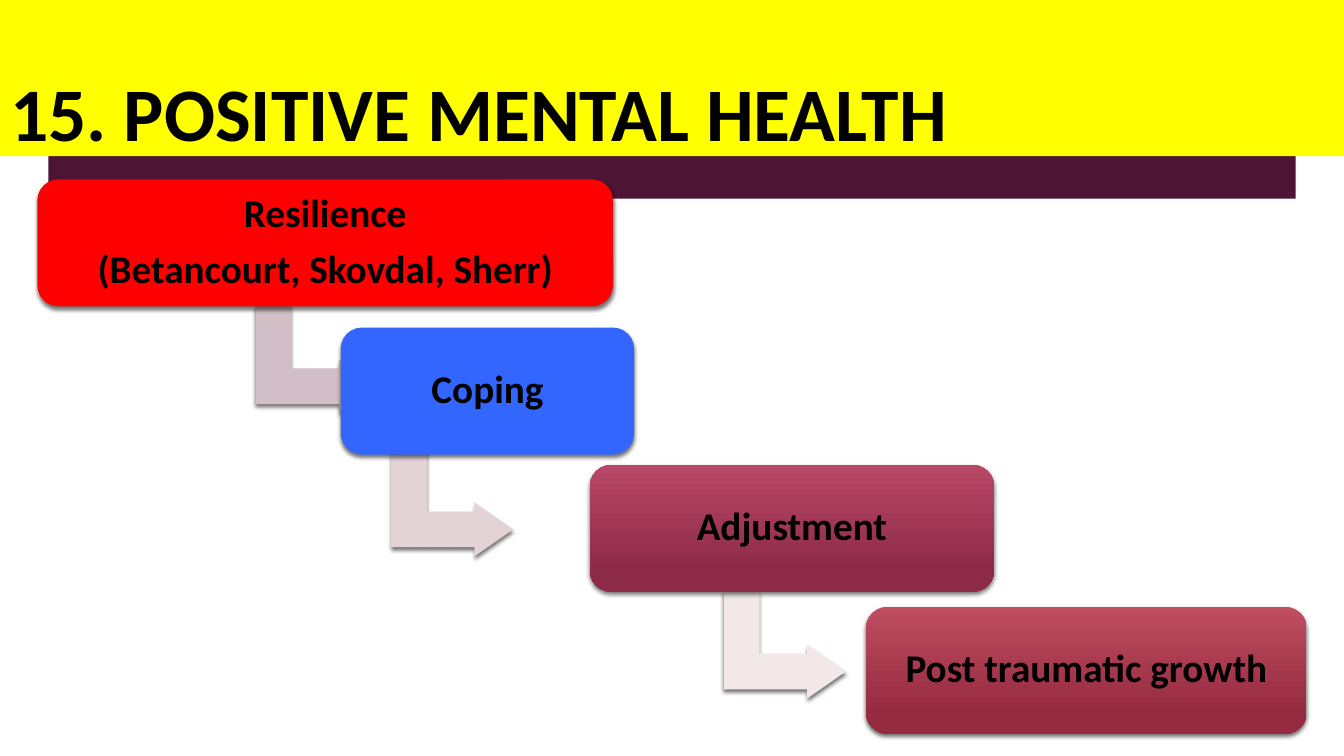
from dataclasses import dataclass

import pptx
import pptx.dml.color
import pptx.dml.fill
import pptx.enum.shapes
import pptx.enum.text
import pptx.oxml
import pptx.oxml.ns
import pptx.shapes.autoshape
import pptx.slide
import pptx.util

Inches = pptx.util.Inches
Pt = pptx.util.Pt
Shape = pptx.shapes.autoshape.Shape
Kind = pptx.enum.shapes.MSO_SHAPE
Align = pptx.enum.text.PP_ALIGN
Anchor = pptx.enum.text.MSO_ANCHOR


@dataclass(frozen=True)
class Arrow:
    left: float
    top: float
    color: str


@dataclass(frozen=True)
class Step:
    lines: tuple[str, ...]
    left: float
    top: float
    width: float
    colors: tuple[str, ...]
    arrow: Arrow | None = None


STEPS = (
    Step(("Resilience", "(Betancourt, Skovdal, Sherr)"), 0.37, 1.78, 5.71,
         ("FF0000",), Arrow(2.61, 2.96, "D1BEC6")),
    Step(("Coping",), 3.38, 3.25, 2.91, ("3366FF",), Arrow(3.95, 4.38, "E3D2D6")),
    Step(("Adjustment",), 5.85, 4.61, 4.01, ("B94867", "8C2A48"),
         Arrow(7.25, 5.79, "F2E8E9")),
    Step(("Post traumatic growth",), 8.59, 6.02, 4.37, ("BF4E61", "962A3F")),
)
SHADE = (
    f'<a:effectLst {pptx.oxml.ns.nsdecls("a")}>'
    '<a:outerShdw blurRad="38100" dist="25400" dir="5400000" rotWithShape="0">'
    '<a:srgbClr val="000000"><a:alpha val="55000"/></a:srgbClr>'
    '</a:outerShdw></a:effectLst>'
)


def rgb(code: str) -> pptx.dml.color.RGBColor:
    return pptx.dml.color.RGBColor.from_string(code)


def paint(fill: pptx.dml.fill.FillFormat, colors: tuple[str, ...]) -> None:
    if len(colors) == 1:
        fill.solid()
        fill.fore_color.rgb = rgb(colors[0])
        return
    fill.gradient()
    fill.gradient_angle = 270
    for stop, code, place in zip(fill.gradient_stops, colors, (0, 0.84)):
        stop.color.rgb = rgb(code)
        stop.position = place


def add_form(slide: pptx.slide.Slide, kind: Kind, left: float, top: float,
             width: float, height: float, colors: tuple[str, ...]) -> Shape:
    form = slide.shapes.add_shape(
        kind, Inches(left), Inches(top), Inches(width), Inches(height))
    form.shadow.inherit = False
    form.line.fill.background()
    paint(form.fill, colors)
    return form


def cast(form: Shape) -> None:
    props = form._element.spPr
    props.remove(props.find(pptx.oxml.ns.qn("a:effectLst")))
    props.append(pptx.oxml.parse_xml(SHADE))


def add_arrow(slide: pptx.slide.Slide, arrow: Arrow) -> None:
    form = add_form(slide, Kind.BENT_UP_ARROW, arrow.left, arrow.top,
                    1.07, 1.21, (arrow.color,))
    form.rotation = 90
    for index, value in enumerate((0.33, 0.25, 0.36)):
        form.adjustments[index] = value
    cast(form)


def add_step(slide: pptx.slide.Slide, step: Step) -> None:
    if step.arrow:
        add_arrow(slide, step.arrow)
    form = add_form(slide, Kind.ROUNDED_RECTANGLE, step.left, step.top,
                    step.width, 1.26, step.colors)
    cast(form)
    frame = form.text_frame
    frame.word_wrap = True
    frame.vertical_anchor = Anchor.MIDDLE
    frame.margin_left = frame.margin_right = Inches(0.18)
    frame.margin_top = frame.margin_bottom = Inches(0.12)
    frame.text = "\n".join(step.lines)
    for para in frame.paragraphs:
        para.alignment = Align.CENTER
        para.line_spacing = 0.9
        para.space_after = Pt(10)
        style(para, 28)


def style(para: pptx.text.text._Paragraph, size: int) -> None:
    para.font.name = "Calibri"
    para.font.size = Pt(size)
    para.font.bold = True
    para.font.color.rgb = rgb("000000")


def set_title(slide: pptx.slide.Slide) -> None:
    title = slide.shapes.title
    title.left = title.top = Inches(0)
    title.width, title.height = Inches(13.33), Inches(1.55)
    paint(title.fill, ("FFFF00",))
    frame = title.text_frame
    frame.text = "15. POSITIVE MENTAL HEALTH"
    frame.auto_size = pptx.enum.text.MSO_AUTO_SIZE.NONE
    frame.vertical_anchor = Anchor.BOTTOM
    frame.margin_bottom = Inches(0)
    frame.paragraphs[0].alignment = Align.LEFT
    style(frame.paragraphs[0], 54)


def main() -> None:
    """Build the slide on positive mental health."""
    deck = pptx.Presentation()
    deck.slide_width, deck.slide_height = Inches(13.33), Inches(7.5)
    slide = deck.slides.add_slide(deck.slide_layouts[5])
    set_title(slide)
    band = add_form(slide, Kind.RECTANGLE, 0.48, 0.67, 12.37, 1.3, ("4D1434",))
    slide.shapes.title._element.addprevious(band._element)
    for step in STEPS:
        add_step(slide, step)
    deck.save("out.pptx")


if __name__ == "__main__":
    main()
